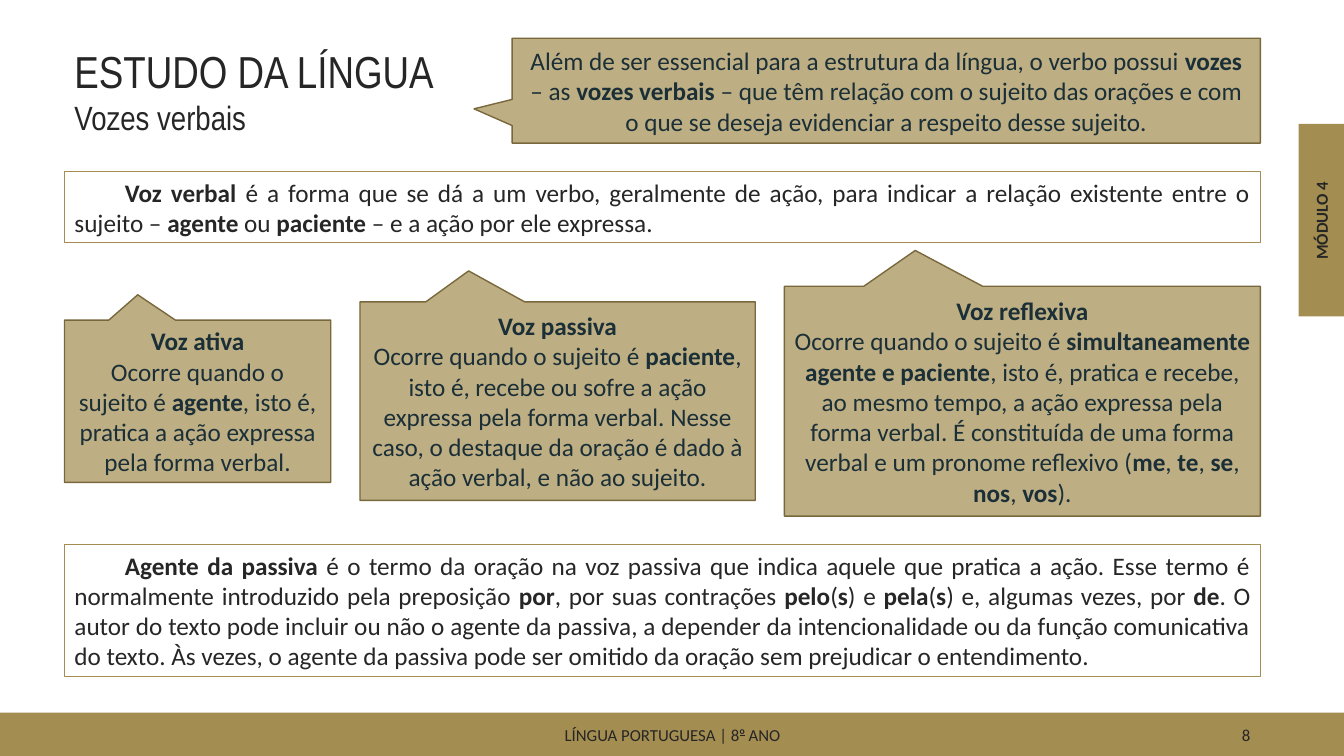
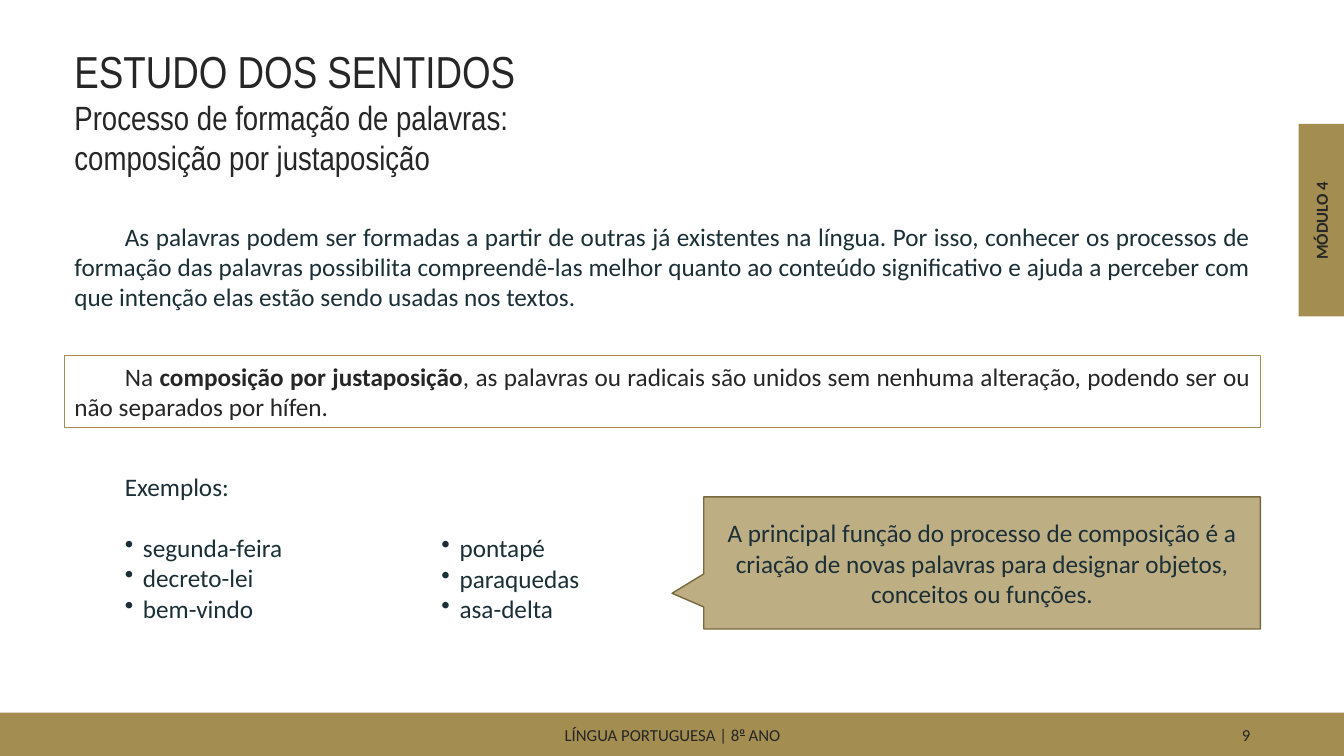
from dataclasses import dataclass
from typing import Any, NamedTuple

from lxml import etree
from pptx import Presentation
from pptx.dml.color import RGBColor
from pptx.enum.shapes import MSO_SHAPE
from pptx.enum.text import MSO_ANCHOR, PP_ALIGN
from pptx.oxml.ns import qn
from pptx.util import Inches, Pt

RECTANGLE, CALLOUT = MSO_SHAPE.RECTANGLE, MSO_SHAPE.RECTANGULAR_CALLOUT
LEFT, CENTER, RIGHT, JUSTIFY = PP_ALIGN.LEFT, PP_ALIGN.CENTER, PP_ALIGN.RIGHT, PP_ALIGN.JUSTIFY
TOP, MIDDLE = MSO_ANCHOR.TOP, MSO_ANCHOR.MIDDLE

COLORS = {"gold": "A38D51", "edge": "79683C", "text": "262626", "navy": "1B2F36"}
PAGE_WIDTH, PAGE_HEIGHT = 13.33, 7.5
MARGIN, CONTENT_WIDTH = 0.64, 11.86
FIRST_LINE, BULLET_WIDTH = 0.5, 0.18
BLANK_LINE = Pt(22)


class Area(NamedTuple):
    left: float
    top: float
    width: float
    height: float

    def lengths(self) -> list[int]:
        return [Inches(value) for value in self]


@dataclass(frozen=True)
class Style:
    size: int = 18
    color: str = "text"
    align: Any = LEFT
    font: str = "Calibri"
    bold: bool = False
    first_line: float = 0
    space_after: int = 0
    bullet: bool = False


TITLE = Style(32, font="Arial Narrow")
SUBTITLE = Style(24, font="Arial Narrow")
FOOTER = Style(12, align=CENTER, space_after=6)
PAGE_NUMBER = Style(12, align=RIGHT, space_after=6)
MODULE = Style(12, align=CENTER, bold=True)
DEFINITION = Style(align=JUSTIFY, first_line=FIRST_LINE)
BODY = Style(color="navy", align=JUSTIFY, first_line=FIRST_LINE)
NOTE = Style(color="navy", align=CENTER)
EXAMPLE = Style(color="navy", bullet=True)


@dataclass(frozen=True)
class Callout:
    area: Area
    pointer: tuple[float, float]
    lines: list[str]


def set_format(target: Any, values: dict[str, Any]) -> None:
    for name, value in values.items():
        setattr(target, name, value)


def write(box: Any, lines: list[str], style: Style, anchor: Any = MIDDLE) -> list[Any]:
    """Append paragraphs, with bold between double asterisks, and return them."""
    frame = box.text_frame
    set_format(frame, {"word_wrap": True, "vertical_anchor": anchor})
    paras = []
    for line in lines:
        para = frame.paragraphs[0] if not frame.text else frame.add_paragraph()
        set_format(para, {"alignment": style.align, "space_after": Pt(style.space_after)})
        properties = para._p.get_or_add_pPr()
        if style.bullet:
            properties.set("marL", str(Inches(FIRST_LINE + BULLET_WIDTH)))
            properties.set("indent", str(-Inches(BULLET_WIDTH)))
            etree.SubElement(properties, qn("a:buChar"), char="•")
        else:
            properties.set("marL", "0")
            properties.set("indent", str(Inches(style.first_line)))
        for index, piece in enumerate(line.split("**")):
            if piece:
                span = para.add_run()
                span.text = piece
                set_format(span.font, {"name": style.font, "size": Pt(style.size),
                                       "bold": style.bold or index % 2 == 1})
                span.font.color.rgb = RGBColor.from_string(COLORS[style.color])
        paras.append(para)
    return paras


def add_text(page: Any, area: Area, lines: list[str], style: Style, anchor: Any = MIDDLE) -> Any:
    box = page.shapes.add_textbox(*area.lengths())
    write(box, lines, style, anchor)
    return box


def add_box(page: Any, kind: Any, area: Area, fill: str = "", line: str = "",
            line_width: float = 1) -> Any:
    box = page.shapes.add_shape(kind, *area.lengths())
    box.shadow.inherit = False
    if fill:
        box.fill.solid()
        box.fill.fore_color.rgb = RGBColor.from_string(COLORS[fill])
    else:
        box.fill.background()
    if line:
        box.line.color.rgb = RGBColor.from_string(COLORS[line])
        box.line.width = Pt(line_width)
    else:
        box.line.fill.background()
    return box


def add_callout(page: Any, callout: Callout) -> None:
    box = add_box(page, CALLOUT, callout.area, "gold", "edge")
    fill_color = box._element.spPr.find(f"{qn('a:solidFill')}/{qn('a:srgbClr')}")
    etree.SubElement(fill_color, qn("a:alpha"), val="70000")
    box.adjustments[0], box.adjustments[1] = callout.pointer
    write(box, callout.lines, NOTE)


def add_definition(page: Any, top: float, height: float, text: str) -> None:
    area = Area(MARGIN, top, CONTENT_WIDTH, height)
    write(add_box(page, RECTANGLE, area, line="gold", line_width=0.75), [text], DEFINITION)


def add_page(deck: Any, number: int, title: str, subtitle: str, title_width: float) -> Any:
    """Add a page with its title, footer band and module tab."""
    page = deck.slides.add_slide(deck.slide_layouts[6])
    add_box(page, RECTANGLE, Area(0, 7.07, PAGE_WIDTH, 0.45), "gold")
    footer = add_text(page, Area(4.42, 7.1, 4.5, 0.38),
                      ["LÍNGUA PORTUGUESA | 8**o** ANO"], FOOTER)
    ordinal = footer.text_frame.paragraphs[0].runs[1]
    ordinal.font.underline = True
    ordinal._r.get_or_add_rPr().set("baseline", "45000")
    add_text(page, Area(9.42, 7.1, 3.08, 0.38), [str(number)], PAGE_NUMBER)
    add_box(page, RECTANGLE, Area(12.88, 1.23, 0.45, 1.91), "gold")
    add_text(page, Area(12.15, 2.04, 1.91, 0.3), ["MÓDULO 4"], MODULE, TOP).rotation = 270
    heading = add_text(page, Area(MARGIN, 0.38, title_width, 1.04), [title], TITLE, TOP)
    write(heading, [subtitle], SUBTITLE, TOP)
    return page


def build_voices(deck: Any) -> None:
    page = add_page(deck, 8, "ESTUDO DA LÍNGUA", "Vozes verbais", 6.17)
    add_callout(page, Callout(Area(5.08, 0.38, 7.42, 1.04), (-0.551, 0.173), [
        "Além de ser essencial para a estrutura da língua, o verbo possui **vozes** – as "
        "**vozes verbais **– que têm relação com o sujeito das orações e com o que se deseja "
        "evidenciar a respeito desse sujeito."]))
    add_definition(page, 1.7, 0.71,
                   "**Voz verbal **é a forma que se dá a um verbo, geralmente de ação, para "
                   "indicar a relação existente entre o sujeito – **agente** ou **paciente** – "
                   "e a ação por ele expressa.")
    voices = [
        (2.64, 1.61, "**Voz ativa**",
         "Ocorre quando o sujeito é **agente**, isto é, pratica a ação expressa pela forma "
         "verbal."),
        (3.92, 1.97, "**Voz passiva**",
         "Ocorre quando o sujeito é **paciente**, isto é, recebe ou sofre a ação expressa pela "
         "forma verbal. Nesse caso, o destaque da oração é dado à ação verbal, e não ao "
         "sujeito."),
        (4.72, 2.28, "**Voz reflexiva**",
         "Ocorre quando o sujeito é **simultaneamente agente e paciente**, isto é, pratica e "
         "recebe, ao mesmo tempo, a ação expressa pela forma verbal. É constituída de uma forma "
         "verbal e um pronome reflexivo (**me**, **te**, **se**, **nos**, **vos**)."),
    ]
    gap = (CONTENT_WIDTH - sum(voice[0] for voice in voices)) / (len(voices) - 1)
    left, middle = MARGIN, 3.98
    for width, height, name, meaning in voices:
        area = Area(left, middle - height / 2, width, height)
        add_callout(page, Callout(area, (-0.225, -0.656), [name, meaning]))
        left += width + gap
    add_definition(page, 5.4, 1.31,
                   "**Agente da passiva **é o termo da oração na voz passiva que indica aquele "
                   "que pratica a ação. Esse termo é normalmente introduzido pela preposição "
                   "**por**, por suas contrações **pelo**(**s**) e **pela**(**s**) e, algumas "
                   "vezes, por **de**. O autor do texto pode incluir ou não o agente da passiva, "
                   "a depender da intencionalidade ou da função comunicativa do texto. Às vezes, "
                   "o agente da passiva pode ser omitido da oração sem prejudicar o "
                   "entendimento.")


def build_composition(deck: Any) -> None:
    page = add_page(deck, 9, "ESTUDO DOS SENTIDOS",
                    "Processo de formação de palavras: composição por justaposição", 5.06)
    add_definition(page, 3.53, 0.71,
                   "Na **composição por justaposição**, as palavras ou radicais são unidos sem "
                   "nenhuma alteração, podendo ser ou não separados por hífen.")
    add_callout(page, Callout(Area(6.98, 4.93, 5.52, 1.31), (-0.557, 0.23), [
        "A principal função do processo de composição é a criação de novas palavras para "
        "designar objetos, conceitos ou funções."]))
    add_text(page, Area(MARGIN, 2.14, CONTENT_WIDTH, 1.01), [
        "As palavras podem ser formadas a partir de outras já existentes na língua. Por isso, "
        "conhecer os processos de formação das palavras possibilita compreendê-las melhor "
        "quanto ao conteúdo significativo e ajuda a perceber com que intenção elas estão sendo "
        "usadas nos textos."], BODY)
    examples = add_text(page, Area(MARGIN, 4.62, 3.04, 1.62), ["Exemplos:"], BODY)
    paras = write(examples, ["segunda-feira", "decreto-lei", "bem-vindo"], EXAMPLE)
    paras[0].space_before = BLANK_LINE
    add_text(page, Area(3.78, 5.23, 3.04, 1.01), ["pontapé", "paraquedas", "asa-delta"], EXAMPLE)


def main() -> None:
    deck = Presentation()
    deck.slide_width, deck.slide_height = Inches(PAGE_WIDTH), Inches(PAGE_HEIGHT)
    build_voices(deck)
    build_composition(deck)
    deck.save("out.pptx")


if __name__ == "__main__":
    main()
